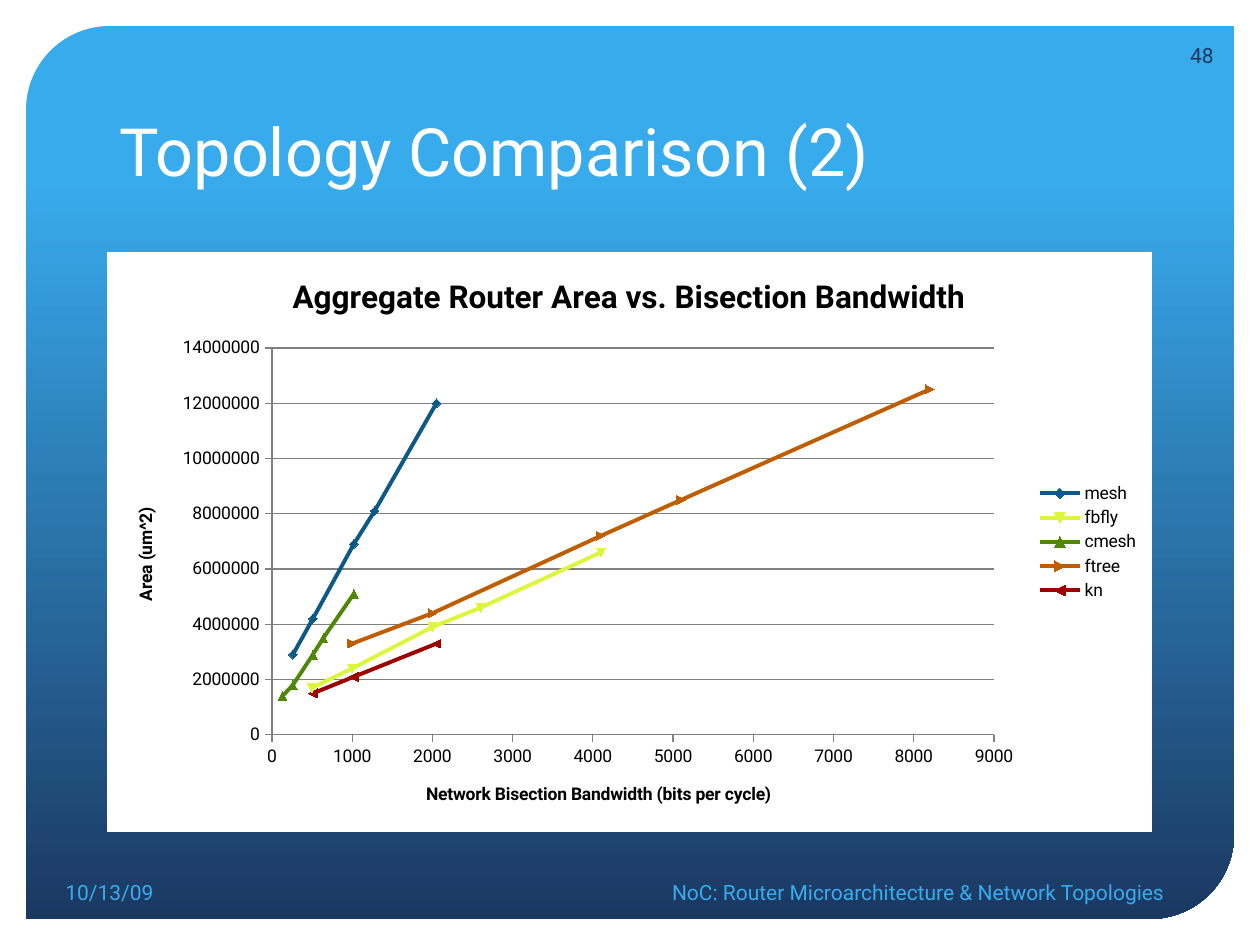
from typing import NamedTuple

from lxml.etree import SubElement
from pptx import Presentation
from pptx.chart.data import XyChartData
from pptx.dml.color import RGBColor
from pptx.enum.chart import XL_CHART_TYPE as ChartType
from pptx.enum.chart import XL_LEGEND_POSITION as LegendPos
from pptx.enum.chart import XL_MARKER_STYLE as Marker
from pptx.enum.chart import XL_TICK_MARK as Tick
from pptx.enum.shapes import MSO_SHAPE as Shape
from pptx.enum.text import MSO_ANCHOR as Anchor
from pptx.enum.text import PP_ALIGN as Align
from pptx.oxml.ns import qn
from pptx.util import Emu, Pt

PX = 914400 / 126
FONT = "Roboto"
WHITE = RGBColor(0xFF, 0xFF, 0xFF)
BLACK = RGBColor(0, 0, 0)
GRAY = RGBColor(0x80, 0x80, 0x80)
SKY = RGBColor(0x38, 0xAB, 0xED)
NAVY = RGBColor(0x1B, 0x38, 0x61)


class Box(NamedTuple):
    left: int
    top: int
    width: int
    height: int

    def emu(self) -> list[Emu]:
        return [Emu(round(v * PX)) for v in self]


class Topology(NamedTuple):
    name: str
    color: RGBColor
    points: list[tuple[int, int]]  # bandwidth, area in units of 100000 um^2


PANEL = Box(26, 26, 1208, 893)
CHART = Box(107, 252, 1045, 580)
PLOT = Box(272, 348, 722, 387)
LEGEND = Box(1034, 479, 108, 126)

TOPOLOGIES = [
    Topology("mesh", RGBColor(0x0C, 0x59, 0x86),
             [(260, 29), (510, 42), (1020, 69), (1280, 81), (2050, 120)]),
    Topology("fbfly", RGBColor(0xDD, 0xF5, 0x3D),
             [(500, 17), (1000, 24), (2000, 39), (2600, 46), (4100, 66)]),
    Topology("cmesh", RGBColor(0x50, 0x87, 0x09),
             [(130, 14), (260, 18), (510, 29), (640, 35), (1020, 51)]),
    Topology("ftree", RGBColor(0xBF, 0x5E, 0x00),
             [(1000, 33), (2000, 44), (4100, 72), (5100, 85), (8200, 125)]),
    Topology("kn", RGBColor(0x9C, 0x00, 0x01),
             [(510, 15), (1020, 21), (2050, 33)]),
]


def set_font(font, size: float, color: RGBColor, bold: bool = False) -> None:
    font.name = FONT
    font.size = Pt(size)
    font.bold = bold
    font.color.rgb = color


def add_text(s, text: str, box: Box, *, size: float = 12, color: RGBColor = SKY,
             align: Align = Align.LEFT, anchor: Anchor = Anchor.MIDDLE) -> None:
    tf = s.shapes.add_textbox(*box.emu()).text_frame
    tf.word_wrap = True
    tf.vertical_anchor = anchor
    p = tf.paragraphs[0]
    p.alignment = align
    r = p.add_run()
    r.text = text
    set_font(r.font, size, color)


def add_panel(s) -> None:
    sp = s.shapes.add_shape(Shape.ROUND_2_DIAG_RECTANGLE, *PANEL.emu())
    sp.shadow.inherit = False
    sp.adjustments[0] = 0.094
    sp.adjustments[1] = 0
    sp.line.fill.background()
    sp.fill.gradient()
    sp.fill.gradient_angle = 270
    for stop, position, color in zip(sp.fill.gradient_stops, (0.17, 1), (SKY, NAVY)):
        stop.position = position
        stop.color.rgb = color


def place(parent, after: str | None, left: int, top: int,
          width: int = 0, height: int = 0, inner: bool = False) -> None:
    """Give a chart part a fixed place, in px on the slide."""
    for old in parent.findall(qn("c:layout")):
        parent.remove(old)
    layout = parent.makeelement(qn("c:layout"))
    parent.insert(parent.index(parent.find(qn(after))) + 1 if after else 0, layout)
    manual = SubElement(layout, qn("c:manualLayout"))
    settings = [("layoutTarget", "inner")] if inner else []
    settings += [("xMode", "edge"), ("yMode", "edge"),
                 ("x", (left - CHART.left) / CHART.width),
                 ("y", (top - CHART.top) / CHART.height)]
    if width:
        settings += [("w", width / CHART.width), ("h", height / CHART.height)]
    for tag, value in settings:
        text = value if isinstance(value, str) else f"{value:.4f}"
        SubElement(manual, qn(f"c:{tag}")).set("val", text)


def fill_background(chart, color: RGBColor) -> None:
    space = chart._chartSpace
    sp_pr = space.makeelement(qn("c:spPr"))
    space.chart.addnext(sp_pr)
    fill = SubElement(sp_pr, qn("a:solidFill"))
    SubElement(fill, qn("a:srgbClr")).set("val", str(color))
    SubElement(SubElement(sp_pr, qn("a:ln")), qn("a:noFill"))


def set_title(owner, text: str, size: float, left: int, top: int) -> None:
    """Title a chart or an axis."""
    title = owner.chart_title if hasattr(owner, "chart_title") else owner.axis_title
    tf = title.text_frame
    r = tf.paragraphs[0].add_run()
    r.text = text
    set_font(r.font, size, BLACK, bold=True)
    place(tf._txBody.getparent().getparent(), "c:tx", left, top)


def style_axis(axis, maximum: int, step: int, grid: bool) -> None:
    axis.minimum_scale, axis.maximum_scale, axis.major_unit = 0, maximum, step
    axis.has_major_gridlines = grid
    axis.major_tick_mark = Tick.OUTSIDE
    axis.minor_tick_mark = Tick.NONE
    axis.tick_labels.number_format = "0"
    axis.tick_labels.number_format_is_linked = False
    set_font(axis.tick_labels.font, 10, BLACK)
    lines = [axis.format.line] + ([axis.major_gridlines.format.line] if grid else [])
    for line in lines:
        line.color.rgb = GRAY
        line.width = Pt(0.75)


def add_area_chart(s) -> None:
    data = XyChartData()
    for topology in TOPOLOGIES:
        series = data.add_series(topology.name)
        for bandwidth, area in topology.points:
            series.add_data_point(bandwidth, area * 100000)

    chart = s.shapes.add_chart(ChartType.XY_SCATTER_LINES, *CHART.emu(), data).chart
    set_font(chart.font, 10, BLACK)
    fill_background(chart, WHITE)
    set_title(chart, "Aggregate Router Area vs. Bisection Bandwidth", 18, 287, 270)
    style_axis(chart.category_axis, 9000, 1000, grid=False)
    style_axis(chart.value_axis, 14000000, 2000000, grid=True)
    set_title(chart.category_axis, "Network Bisection Bandwidth (bits per cycle)",
              10, 423, 779)
    set_title(chart.value_axis, "Area (um^2) ", 10, 131, 500)

    chart.has_legend = True
    chart.legend.position = LegendPos.RIGHT
    chart.legend.include_in_layout = False
    set_font(chart.legend.font, 10, BLACK)
    place(chart.legend._element, "c:legendPos", *LEGEND)
    place(chart._chartSpace.chart.plotArea, None, *PLOT, inner=True)

    plot = chart.plots[0]
    plot.vary_by_categories = False
    for series, topology in zip(plot.series, TOPOLOGIES):
        series.format.line.color.rgb = topology.color
        series.format.line.width = Pt(2.25)
        series.marker.style = Marker.AUTOMATIC
        series.marker.size = 5
        series.marker.format.fill.solid()
        series.marker.format.fill.fore_color.rgb = topology.color
        series.marker.format.line.color.rgb = topology.color
        for smooth in series._element.findall(qn("c:smooth")):
            smooth.set("val", "0")


def main() -> None:
    prs = Presentation()
    prs.slide_width, prs.slide_height = Emu(round(1260 * PX)), Emu(round(945 * PX))
    s = prs.slides.add_slide(prs.slide_layouts[6])
    add_panel(s)
    add_text(s, "Topology Comparison (2)", Box(107, 53, 1045, 143),
             size=38, color=WHITE, anchor=Anchor.BOTTOM)
    add_area_chart(s)
    add_text(s, "10/13/09", Box(53, 867, 260, 50))
    add_text(s, "48", Box(1158, 30, 68, 50), color=NAVY, align=Align.RIGHT)
    add_text(s, "NoC: Router Microarchitecture & Network Topologies",
             Box(455, 867, 722, 50), align=Align.RIGHT)
    prs.save("out.pptx")


if __name__ == "__main__":
    main()
